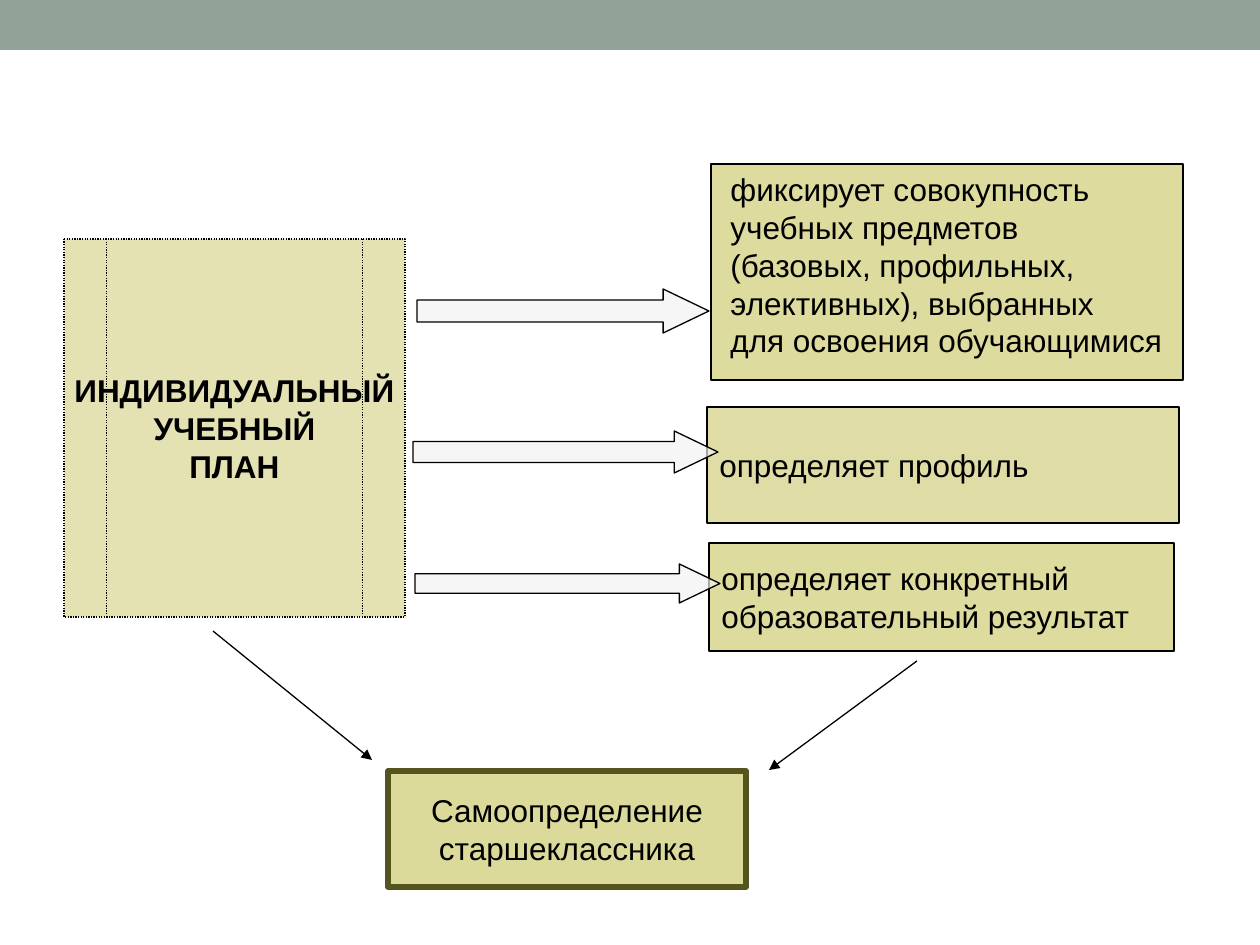
import pptx
import pptx.dml.color
import pptx.enum.dml
import pptx.enum.shapes
import pptx.enum.text
import pptx.util
from lxml import etree
from pptx.oxml.ns import qn

SCALE = 914400 / 126  # EMU in one px
COLORS = {"band": "93A299", "card": "D5D286", "arrow": "F2F2F2",
          "olive": "56541E", "ink": "000000"}
KIND = pptx.enum.shapes.MSO_SHAPE
ALIGN = pptx.enum.text.PP_ALIGN
ANCHOR = pptx.enum.text.MSO_ANCHOR


def emu(*sizes):
    return [round(size * SCALE) for size in sizes]


def tint(name):
    return pptx.dml.color.RGBColor.from_string(COLORS[name])


def assign(target, values):
    for name, value in values.items():
        setattr(target, name, value)


class Board:
    """Holds the text style and the current slide."""

    def __init__(self, slide):
        self.slide = slide
        self.font = {"name": "Arial", "size": pptx.util.Pt(18), "bold": False}

    def shape(self, kind, box, fill, alpha=100, edge="ink", width=0.75):
        shape = self.slide.shapes.add_shape(kind, *emu(*box))
        shape.shadow.inherit = False
        shape.fill.solid()
        shape.fill.fore_color.rgb = tint(fill)
        if alpha < 100:
            color = shape.fill._xPr.find(qn("a:solidFill"))[0]
            etree.SubElement(color, qn("a:alpha"), val=str(alpha * 1000))
        if edge:
            shape.line.color.rgb = tint(edge)
            shape.line.width = pptx.util.Pt(width)
        else:
            shape.line.fill.background()
        return shape

    def text(self, shape, lines, align=ALIGN.LEFT, anchor=ANCHOR.MIDDLE, **font):
        frame = shape.text_frame
        assign(frame, {"text": "\n".join(lines), "word_wrap": False,
                       "vertical_anchor": anchor})
        for para in frame.paragraphs:
            para.alignment = align
            assign(para.font, self.font | font)
            para.font.color.rgb = tint("ink")

    def label(self, box, lines):
        shape = self.slide.shapes.add_textbox(*emu(*box))
        self.text(shape, lines, anchor=ANCHOR.TOP)

    def arrow(self, box):
        shape = self.shape(KIND.RIGHT_ARROW, box, "arrow", 69)
        shape.adjustments[1] = 1.04

    def line(self, start, end):
        line = self.slide.shapes.add_connector(
            pptx.enum.shapes.MSO_CONNECTOR.STRAIGHT, *emu(*start, *end))
        line.line.color.rgb = tint("ink")
        line.line.width = pptx.util.Pt(0.75)
        etree.SubElement(line.line._get_or_add_ln(), qn("a:tailEnd"),
                         type="triangle")
        etree.SubElement(line._element.spPr, qn("a:effectLst"))


def main():
    deck = pptx.Presentation()
    deck.slide_width, deck.slide_height = emu(1260, 945)
    board = Board(deck.slides.add_slide(deck.slide_layouts[6]))

    board.shape(KIND.RECTANGLE, (0, 0, 1260, 50), "band", edge=None)

    plan = board.shape(KIND.FLOWCHART_PREDEFINED_PROCESS,
                       (64, 239, 341, 378), "card", 63)
    plan.line.dash_style = pptx.enum.dml.MSO_LINE.ROUND_DOT
    board.text(plan, ["ИНДИВИДУАЛЬНЫЙ", "УЧЕБНЫЙ", "ПЛАН"],
               ALIGN.CENTER, bold=True)

    goal = board.shape(KIND.FLOWCHART_PROCESS, (388, 771, 358, 116),
                       "card", 82, "olive", 3)
    board.text(goal, ["Самоопределение", "старшеклассника"], ALIGN.CENTER)

    board.shape(KIND.RECTANGLE, (711, 164, 472, 216), "card", 80)
    board.label((718, 164, 457, 239),
                ["фиксирует совокупность", "учебных предметов",
                 "(базовых, профильных,", "элективных), выбранных",
                 "для освоения обучающимися"])

    roles = [
        ((707, 407, 472, 116), 74, ["определяет профиль"]),
        ((709, 543, 465, 108), 80,
         ["определяет конкретный", "образовательный результат"]),
    ]
    for box, alpha, lines in roles:
        board.text(board.shape(KIND.RECTANGLE, box, "card", alpha), lines)

    for box in [(417, 289, 292, 44), (413, 431, 305, 42), (415, 564, 305, 39)]:
        board.arrow(box)

    board.line((213, 631), (372, 760))
    board.line((917, 661), (769, 770))

    deck.save("out.pptx")


if __name__ == "__main__":
    main()
